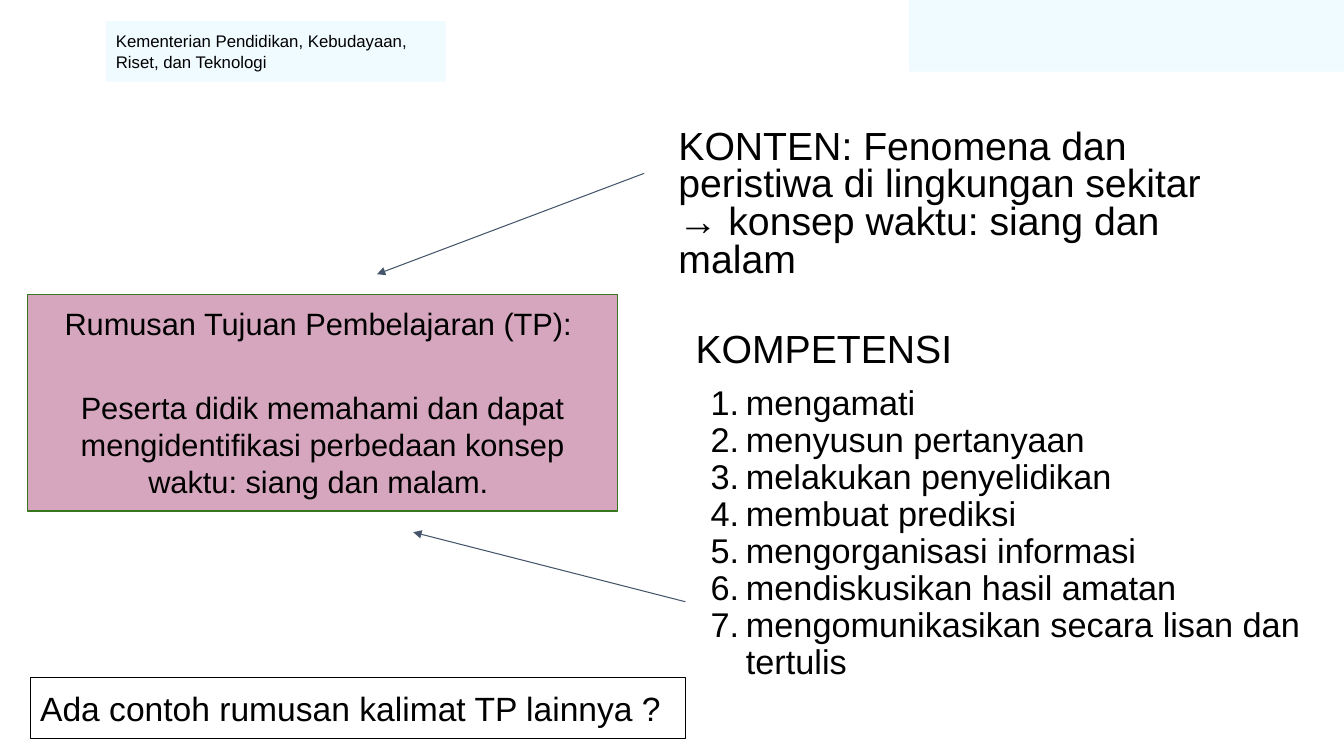
from dataclasses import dataclass
from typing import Optional

from lxml import etree
from pptx import Presentation
from pptx import util as u
from pptx.dml.color import RGBColor
from pptx.enum import shapes, text
from pptx.oxml import ns

prs = Presentation()
prs.slide_width, prs.slide_height = u.Inches(13.333), u.Inches(7.5)
COL, ROW = prs.slide_width / 100, prs.slide_height / 100

PALE, PINK, GREEN, SLATE, BLACK = "F0FBFF", "D5A6BD", "38761D", "44546A", "000000"
LINE_WIDTH = u.Pt(0.75)
TOP, MIDDLE = text.MSO_ANCHOR.TOP, text.MSO_ANCHOR.MIDDLE
LEFT, CENTER = text.PP_ALIGN.LEFT, text.PP_ALIGN.CENTER


@dataclass
class Para:
    words: str
    size: float
    before: float = 0
    spacing: float = 1.0
    align: text.PP_ALIGN = LEFT
    numbered: bool = False


@dataclass
class Box:
    area: tuple[float, float, float, float]
    paras: list[Para]
    fill: Optional[str] = None
    line: Optional[str] = None
    anchor: text.MSO_ANCHOR = TOP


@dataclass
class Arrow:
    start: tuple[float, float]
    end: tuple[float, float]


SKILLS = [
    "mengamati",
    "menyusun pertanyaan",
    "melakukan penyelidikan",
    "membuat prediksi",
    "mengorganisasi informasi",
    "mendiskusikan hasil amatan",
    "mengomunikasikan secara lisan dan tertulis",
]

BODIES = [
    Box((51, 42.93, 47.18, 51.87), [Para("KOMPETENSI", 28, spacing=0.9)] + [
        Para(skill, 24.5, 0 if i else 10, 0.9, numbered=True) for i, skill in enumerate(SKILLS)]),
    Box((49.73, 16.53, 42.53, 22.4), [
        Para("KONTEN: Fenomena dan peristiwa di lingkungan sekitar → konsep waktu: siang dan malam",
             28, spacing=0.8)]),
]

BOXES = [
    Box((67.65, 0, 32.35, 9.47), [], PALE),
    Box((7.88, 2.8, 25.28, 8), [
        Para("Kementerian Pendidikan, Kebudayaan, Riset, dan Teknologi", 12)], PALE, anchor=MIDDLE),
    Box((2.03, 38.93, 43.95, 28.67), [
        Para("Rumusan Tujuan Pembelajaran (TP): ", 22, align=CENTER),
        Para("Peserta didik memahami dan dapat mengidentifikasi perbedaan konsep "
             "waktu: siang dan malam. ", 22, 33.6, align=CENTER)], PINK, GREEN),
    Box((2.25, 89.6, 48.75, 8.13), [
        Para("Ada contoh rumusan kalimat TP lainnya ?", 24)], line=BLACK),
]

ARROWS = [
    Arrow((47.93, 22.93), (28.05, 36.27)),
    Arrow((51, 79.6), (30.75, 70.4)),
]


def color(value: str) -> RGBColor:
    return RGBColor.from_string(value)


def apply(target, values: dict) -> None:
    for name, value in values.items():
        setattr(target, name, value)


def grid(x: float, y: float) -> tuple[int, int]:
    return round(x * COL), round(y * ROW)


def place(sp, area: tuple[float, float, float, float]) -> None:
    x, y, w, h = area
    apply(sp, dict(zip(("left", "top", "width", "height"), grid(x, y) + grid(w, h))))


def set_bullet(p, numbered: bool) -> None:
    pPr = p._p.get_or_add_pPr()
    margin, indent = (3.75, -2.63) if numbered else (0, 0)
    pPr.set("marL", str(round(margin * COL)))
    pPr.set("indent", str(round(indent * COL)))
    if numbered:
        buClr = etree.SubElement(pPr, ns.qn("a:buClr"))
        etree.SubElement(buClr, ns.qn("a:srgbClr"), val=BLACK)
        etree.SubElement(pPr, ns.qn("a:buFont"), typeface="Arial")
        etree.SubElement(pPr, ns.qn("a:buAutoNum"), type="arabicPeriod")
    else:
        etree.SubElement(pPr, ns.qn("a:buNone"))


def write(sp, box: Box, inset: float) -> None:
    tf = sp.text_frame
    side, edge = u.Inches(0.1), u.Inches(inset)
    apply(tf, {"word_wrap": True, "auto_size": text.MSO_AUTO_SIZE.NONE,
               "vertical_anchor": box.anchor, "margin_left": side, "margin_right": side,
               "margin_top": edge, "margin_bottom": edge})
    for i, para in enumerate(box.paras):
        p = tf.add_paragraph() if i else tf.paragraphs[0]
        set_bullet(p, para.numbered)
        apply(p, {"alignment": para.align, "line_spacing": para.spacing,
                  "space_before": u.Pt(para.before), "space_after": u.Pt(0)})
        r = p.add_run()
        r.text = para.words
        apply(r.font, {"name": "Arial", "size": u.Pt(para.size)})
        r.font.color.rgb = color(BLACK)


def draw_box(s, box: Box) -> None:
    sp = s.shapes.add_shape(shapes.MSO_SHAPE.RECTANGLE, 0, 0, 0, 0)
    place(sp, box.area)
    sp.shadow.inherit = False
    if box.fill:
        sp.fill.solid()
        sp.fill.fore_color.rgb = color(box.fill)
    else:
        sp.fill.background()
    if box.line:
        sp.line.color.rgb = color(box.line)
        sp.line.width = LINE_WIDTH
    else:
        sp.line.fill.background()
    write(sp, box, 0.1)


def draw_arrow(s, arrow: Arrow) -> None:
    sp = s.shapes.add_connector(
        shapes.MSO_CONNECTOR.STRAIGHT, *grid(*arrow.start), *grid(*arrow.end))
    sp.line.color.rgb = color(SLATE)
    sp.line.width = LINE_WIDTH
    etree.SubElement(sp.line._get_or_add_ln(), ns.qn("a:tailEnd"), type="triangle")
    etree.SubElement(sp._element.spPr, ns.qn("a:effectLst"))


def main() -> None:
    s = prs.slides.add_slide(prs.slide_layouts.get_by_name("Two Content"))
    title, *bodies = s.placeholders
    title._element.getparent().remove(title._element)
    for sp, body in zip(bodies, BODIES):
        place(sp, body.area)
        write(sp, body, 0.05)
    for arrow in ARROWS:
        draw_arrow(s, arrow)
    for box in BOXES:
        draw_box(s, box)
    prs.save("out.pptx")


if __name__ == "__main__":
    main()
